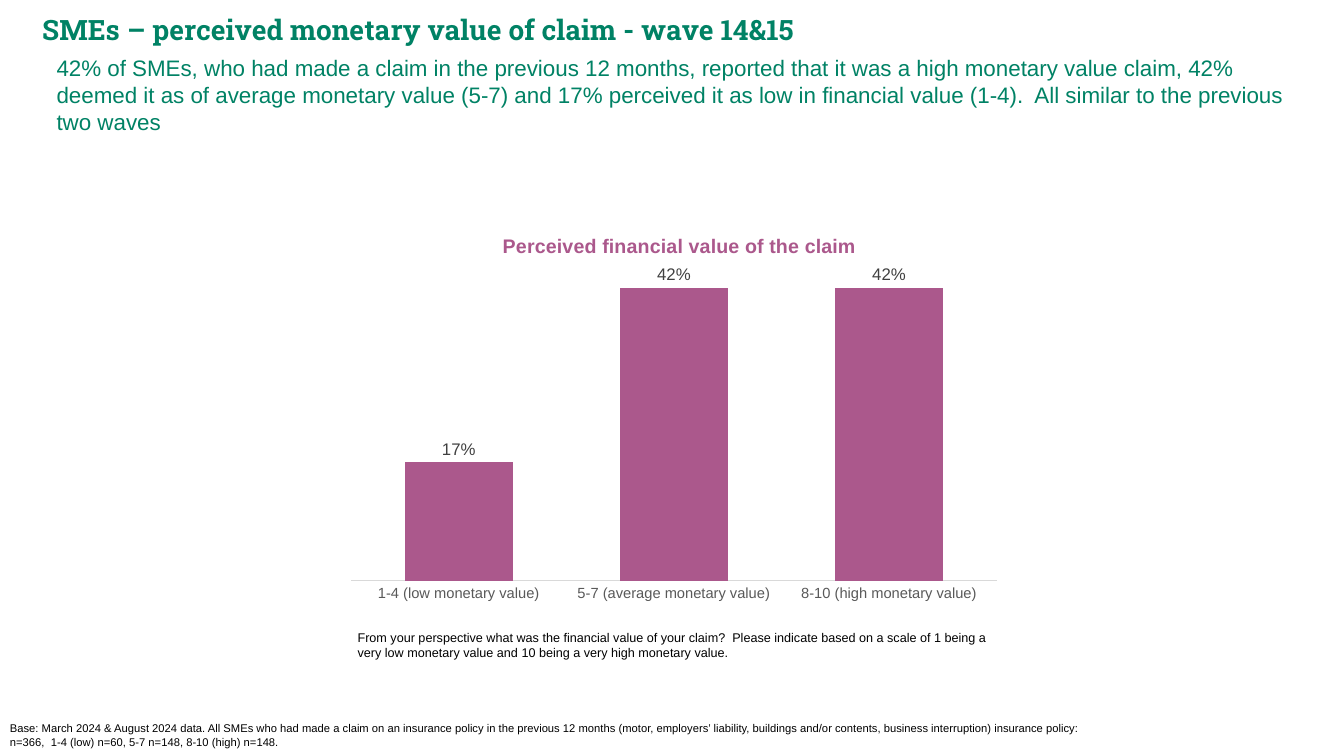
from dataclasses import dataclass

from lxml.etree import SubElement
from pptx import Presentation
from pptx.chart.data import CategoryChartData
from pptx.dml.color import RGBColor
from pptx.enum.chart import XL_CHART_TYPE, XL_LABEL_POSITION, XL_TICK_MARK
from pptx.enum.text import MSO_ANCHOR, MSO_AUTO_SIZE, PP_ALIGN
from pptx.oxml import parse_xml
from pptx.oxml.ns import nsdecls, qn
from pptx.util import Cm, Pt


@dataclass(frozen=True)
class Theme:
    sans: str = "Arial"
    slab: str = "Roboto Slab"
    green: str = "008265"
    plum: str = "AB588C"
    black: str = "000000"
    gray: str = "595959"
    dark: str = "404040"
    rule: str = "D9D9D9"
    head: float = 20
    lead: float = 16
    title: float = 14
    label: float = 12
    axis: float = 10.5
    note: float = 9
    base: float = 8


THEME = Theme()

HEAD = "SMEs – perceived monetary value of claim - wave 14&15"
LEAD = (
    "42% of SMEs, who had made a claim in the previous 12 months, reported that "
    "it was a high monetary value claim, 42% deemed it as of average monetary "
    "value (5-7) and 17% perceived it as low in financial value (1-4).  "
    "All similar to the previous two waves"
)
NOTE = (
    "From your perspective what was the financial value of your claim?  Please "
    "indicate based on a scale of 1 being a very low monetary value and 10 being "
    "a very high monetary value."
)
BASE = (
    "Base: March 2024 & August 2024 data. All SMEs who had made a claim on an "
    "insurance policy in the previous 12 months (motor, employers’ liability, "
    "buildings and/or contents, business interruption) insurance policy: "
    "n=366,  1-4 (low) n=60, 5-7 n=148, 8-10 (high) n=148."
)
CLAIMS = {
    "1-4 (low monetary value)": 0.17,
    "5-7 (average monetary value)": 0.42,
    "8-10 (high monetary value)": 0.42,
}


def apply(target, **format):
    for name, value in format.items():
        setattr(target, name, value)


def style(font, size, color, face=THEME.sans, bold=False):
    apply(font, size=Pt(size), name=face, bold=bold)
    font.color.rgb = RGBColor.from_string(color)


def place(shape, left, top, width, height):
    apply(shape, left=Cm(left), top=Cm(top), width=Cm(width), height=Cm(height))


def write(shape, text, *look):
    """Fill a shape with one plain, left-aligned paragraph."""
    frame = shape.text_frame
    apply(frame, word_wrap=True, auto_size=MSO_AUTO_SIZE.NONE,
          vertical_anchor=MSO_ANCHOR.TOP)
    para = frame.paragraphs[0]
    props = para._p.get_or_add_pPr()
    apply_bullet = {"marL": "0", "indent": "0"}
    for name, value in apply_bullet.items():
        props.set(name, value)
    SubElement(props, qn("a:buNone"))
    apply(para, alignment=PP_ALIGN.LEFT, space_before=Pt(0))
    run = para.add_run()
    run.text = text
    style(run.font, *look)


def add_text(slide, box, text, *look):
    shape = slide.shapes.add_textbox(*map(Cm, box))
    write(shape, text, *look)


def set_layout(parent, **spots):
    """Pin a chart part at fractions of the chart's size."""
    for old in parent.findall(qn("c:layout")):
        parent.remove(old)
    inner = '<c:layoutTarget val="inner"/>' if "w" in spots else ""
    modes = "".join(f'<c:{key}Mode val="edge"/>' for key in "xy")
    sizes = "".join(f'<c:{key} val="{val}"/>' for key, val in spots.items())
    layout = parse_xml(
        f'<c:layout {nsdecls("c")}><c:manualLayout>{inner}{modes}{sizes}'
        "</c:manualLayout></c:layout>"
    )
    text = parent.find(qn("c:tx"))
    if text is None:
        parent.insert(0, layout)
    else:
        text.addnext(layout)


def add_bars(slide, box):
    data = CategoryChartData(number_format="0%")
    data.categories = list(CLAIMS)
    data.add_series("Series 1", list(CLAIMS.values()))
    kind = XL_CHART_TYPE.COLUMN_CLUSTERED
    chart = slide.shapes.add_chart(kind, *map(Cm, box), data).chart
    apply(chart, has_legend=False, has_title=True)
    style(chart.font, 10, THEME.black)

    title = chart.chart_title
    run = title.text_frame.paragraphs[0].add_run()
    run.text = "Perceived financial value of the claim"
    style(run.font, THEME.title, THEME.plum, THEME.sans, True)
    set_layout(title._element, x=0.24, y=0.04)

    axis = chart.category_axis
    apply(axis, major_tick_mark=XL_TICK_MARK.NONE, has_major_gridlines=False)
    style(axis.tick_labels.font, THEME.axis, THEME.gray)
    axis.format.line.width = Pt(0.75)
    axis.format.line.color.rgb = RGBColor.from_string(THEME.rule)
    apply(chart.value_axis, visible=False, has_major_gridlines=False,
          minimum_scale=0, maximum_scale=0.45)

    plot = chart.plots[0]
    apply(plot, gap_width=100, overlap=-27, vary_by_categories=False,
          has_data_labels=True)
    fill = plot.series[0].format.fill
    fill.solid()
    fill.fore_color.rgb = RGBColor.from_string(THEME.plum)
    labels = plot.data_labels
    apply(labels, show_value=True, number_format="0%",
          number_format_is_linked=False, position=XL_LABEL_POSITION.OUTSIDE_END)
    style(labels.font, THEME.label, THEME.dark)
    area = chart._chartSpace.chart.plotArea
    set_layout(area, x=0.02, y=0.135, w=0.96, h=0.793)


def main():
    deck = Presentation()
    apply(deck, slide_width=Cm(33.86), slide_height=Cm(19.05))
    slide = deck.slides.add_slide(deck.slide_layouts[1])
    head, lead = slide.placeholders
    place(head, 0.81, 0.18, 31.19, 1.12)
    write(head, HEAD, THEME.head, THEME.green, THEME.slab, True)
    place(lead, 1.17, 1.24, 32.11, 2.31)
    write(lead, LEAD, THEME.lead, THEME.green)
    add_bars(slide, (8.51, 5.38, 16.94, 9.98))
    add_text(slide, (8.76, 15.75, 16.94, 1.02), NOTE, THEME.note, THEME.black)
    add_text(slide, (0, 18.06, 28.35, 0.99), BASE, THEME.base, THEME.black)
    deck.save("out.pptx")


if __name__ == "__main__":
    main()
